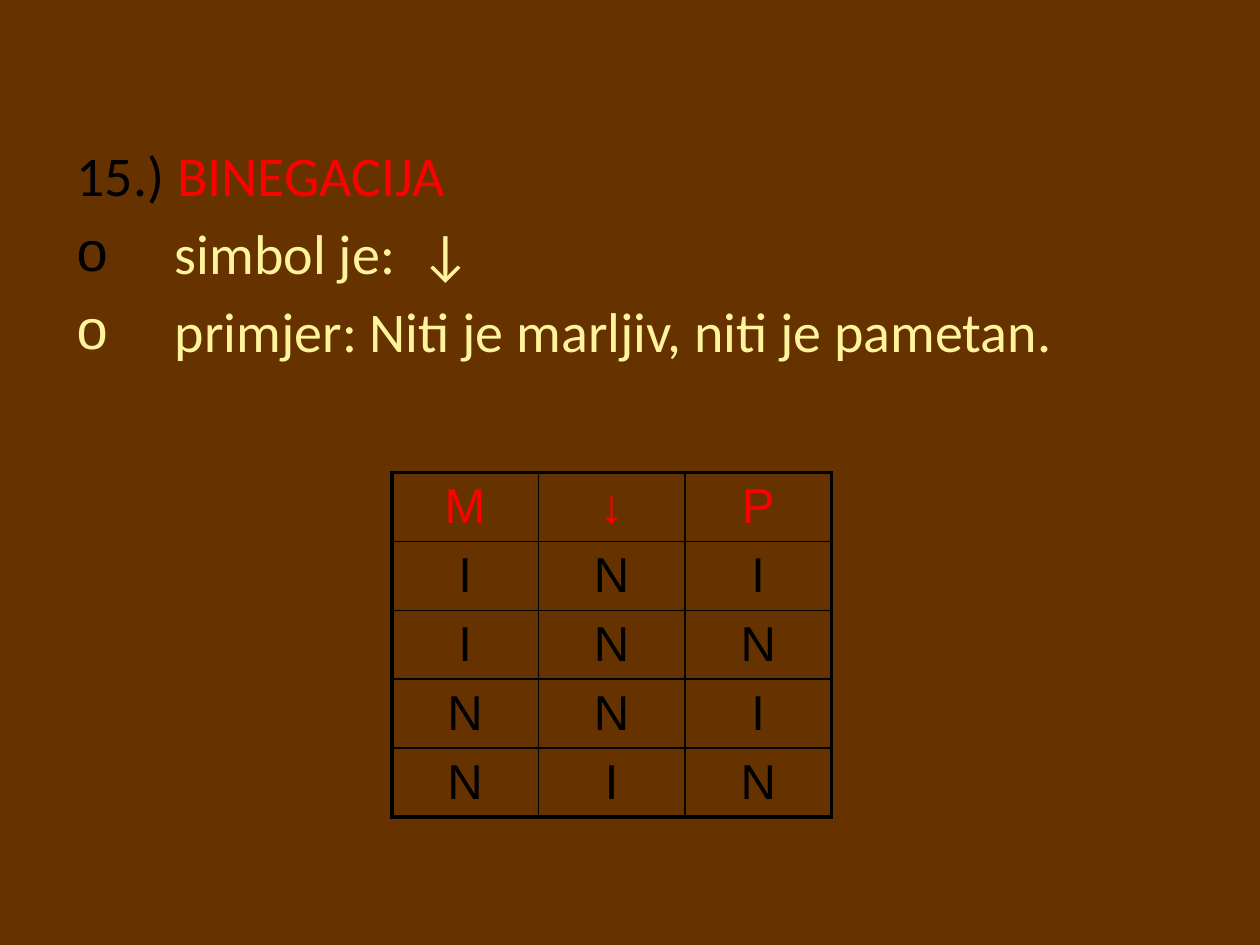
import pptx
import pptx.dml.color
import pptx.enum.text
import pptx.oxml.ns
import pptx.util
from lxml import etree

Inches = pptx.util.Inches
Pt = pptx.util.Pt

COLORS = {
    "background": "663300",
    "black": "000000",
    "red": "FF0000",
    "cream": "FFF39D",
}
TRUTH_TABLE = ["M↓P", "INI", "INN", "NNI", "NIN"]
THIN, THICK = 1, 2.25


def rgb(name):
    return pptx.dml.color.RGBColor.from_string(COLORS[name])


def sub(parent, tag, **attributes):
    """Append a DrawingML child element."""
    return etree.SubElement(parent, pptx.oxml.ns.qn(f"a:{tag}"), **attributes)


def add_span(para, text, color, size, font):
    span = para.add_run()
    span.text = text
    span.font.name = font
    span.font.size = Pt(size)
    span.font.color.rgb = rgb(color)
    return span


def format_para(para, hanging, bullet_color=None):
    """Set the hanging indent and, if a colour is given, an "o" bullet."""
    para.space_before = Pt(6)
    properties = para._p.get_or_add_pPr()
    properties.set("marL", str(Inches(hanging)))
    properties.set("indent", str(-Inches(hanging)))
    if bullet_color:
        sub(sub(properties, "buClr"), "srgbClr", val=COLORS[bullet_color])
        sub(properties, "buFont", typeface="Arial")
        sub(properties, "buChar", char="o")


def add_definition(page):
    box = page.shapes.add_textbox(Inches(0.51), Inches(1.07), Inches(9), Inches(2.2))
    frame = box.text_frame
    frame.word_wrap = True

    heading = frame.paragraphs[0]
    format_para(heading, 0.38)
    add_span(heading, "15.) ", "black", 32, "Calibri")
    add_span(heading, "BINEGACIJA", "red", 32, "Calibri")

    symbol = frame.add_paragraph()
    format_para(symbol, 0.78, "black")
    add_span(symbol, "simbol je:", "cream", 32, "Calibri")
    gap = add_span(symbol, " ", "cream", 32, "Calibri")
    gap.font._element.set("spc", "720")
    add_span(symbol, "↓", "cream", 32, "Calibri")

    example = frame.add_paragraph()
    format_para(example, 0.78, "cream")
    add_span(example, "primjer: Niti je marljiv, niti je pametan.", "cream", 32, "Calibri")


def set_borders(cell, widths):
    """Draw the left, right, top and bottom borders, widths in points."""
    properties = cell._tc.get_or_add_tcPr()
    for side, width in zip("LRTB", widths):
        line = sub(properties, f"ln{side}", w=str(Pt(width)))
        sub(sub(line, "solidFill"), "srgbClr", val=COLORS["black"])


def add_truth_table(page):
    rows, columns = len(TRUTH_TABLE), len(TRUTH_TABLE[0])
    table = page.shapes.add_table(
        rows, columns, Inches(3.11), Inches(3.75), Inches(3.49), Inches(2.67)
    ).table
    for row_index, values in enumerate(TRUTH_TABLE):
        for column_index, value in enumerate(values):
            cell = table.cell(row_index, column_index)
            outer_sides = (
                column_index == 0,
                column_index == columns - 1,
                row_index == 0,
                row_index == rows - 1,
            )
            set_borders(cell, [THICK if outer else THIN for outer in outer_sides])
            cell.fill.background()
            cell.margin_top = cell.margin_bottom = Inches(0.04)
            cell.vertical_anchor = pptx.enum.text.MSO_ANCHOR.MIDDLE
            para = cell.text_frame.paragraphs[0]
            para.alignment = pptx.enum.text.PP_ALIGN.CENTER
            color = "red" if row_index == 0 else "black"
            span = add_span(para, value, color, 28, "Arial")
            span.font.bold = False


def main():
    deck = pptx.Presentation()
    deck.slide_width, deck.slide_height = Inches(10), Inches(7.5)
    page = deck.slides.add_slide(deck.slide_layouts[6])
    page.background.fill.solid()
    page.background.fill.fore_color.rgb = rgb("background")
    add_definition(page)
    add_truth_table(page)
    deck.save("out.pptx")


if __name__ == "__main__":
    main()
